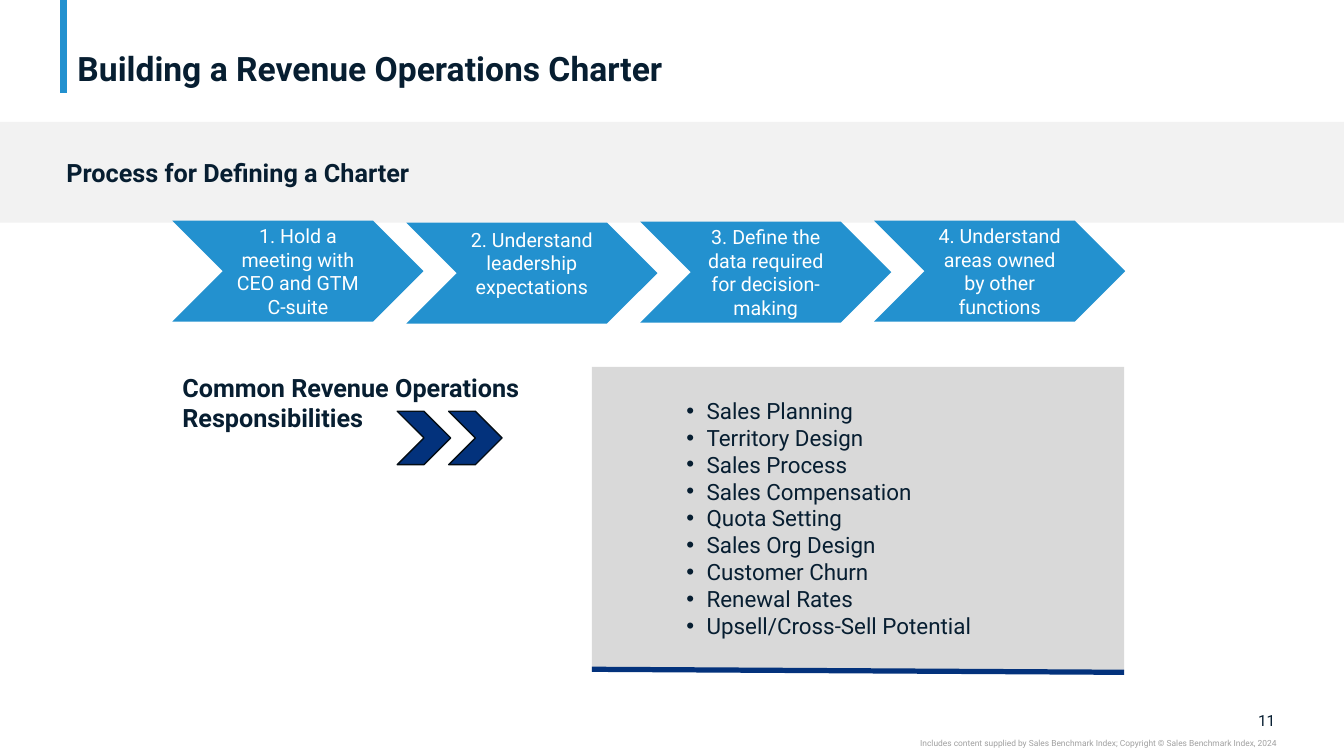
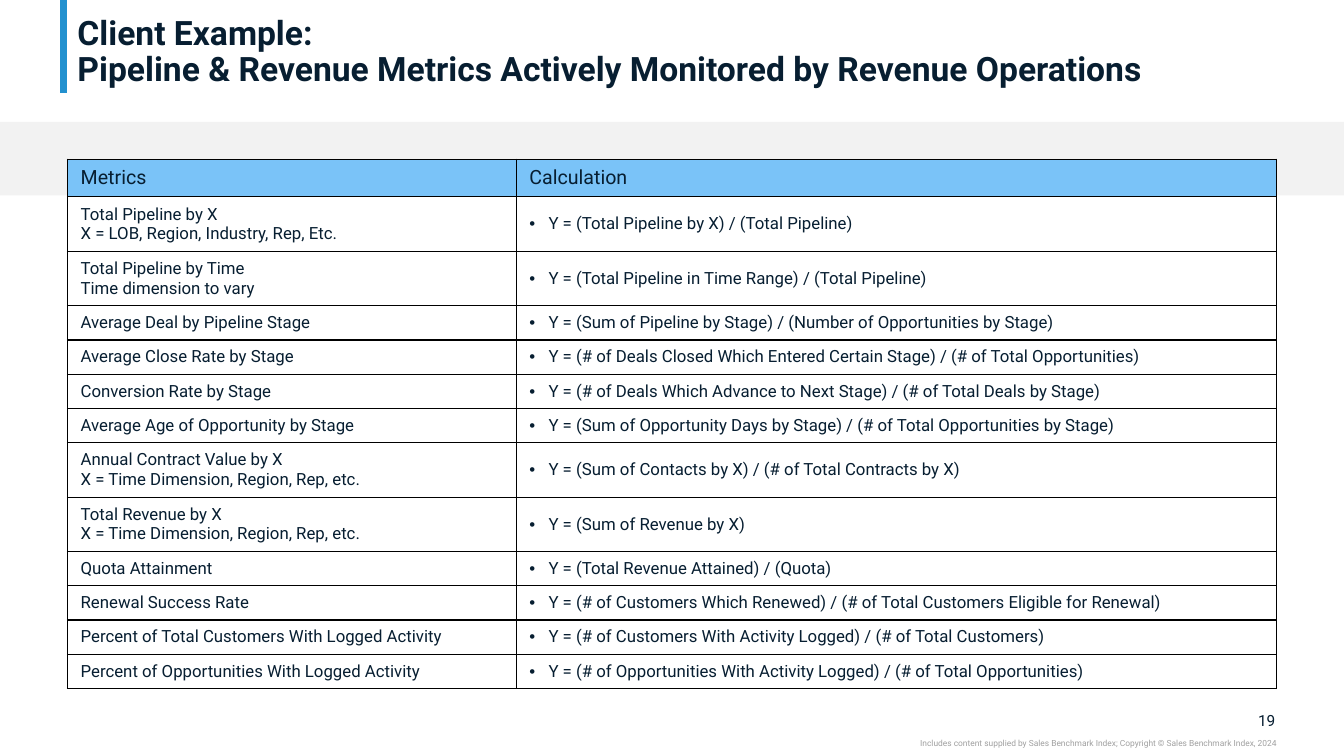
from dataclasses import dataclass, replace
from typing import NamedTuple

from lxml.etree import SubElement
from pptx import Presentation
from pptx.dml.color import RGBColor
from pptx.enum.shapes import MSO_CONNECTOR, MSO_SHAPE
from pptx.enum.text import MSO_ANCHOR, PP_ALIGN
from pptx.oxml.ns import qn
from pptx.shapes.autoshape import Shape
from pptx.slide import Slide
from pptx.table import _Cell
from pptx.text.text import TextFrame
from pptx.util import Emu, Pt

EMU_PER_PX = 9144  # 100 px to the inch
SLIDE_WIDTH, SLIDE_HEIGHT = 1333, 750

NAVY_TEXT = RGBColor(0x07, 0x1E, 0x31)
BLUE = RGBColor(0x23, 0x91, 0xCF)
DARK_BLUE = RGBColor(0x03, 0x32, 0x7C)
SKY = RGBColor(0x7A, 0xC3, 0xF8)
INK = RGBColor(0x03, 0x0D, 0x15)
BAND_GREY = RGBColor(0xF2, 0xF2, 0xF2)
PANEL_GREY = RGBColor(0xD9, 0xD9, 0xD9)
FOOTER_GREY = RGBColor(0xA0, 0xA0, 0xA0)
WHITE = RGBColor(0xFF, 0xFF, 0xFF)
BLACK = RGBColor(0x00, 0x00, 0x00)

COPYRIGHT = (
    "Includes content supplied by Sales Benchmark Index; "
    "Copyright © Sales Benchmark Index, 2024"
)


class Box(NamedTuple):
    left: int
    top: int
    width: int
    height: int


class Margins(NamedTuple):
    left: int
    top: int
    right: int
    bottom: int


@dataclass(frozen=True)
class TextStyle:
    size: int
    color: RGBColor = NAVY_TEXT
    bold: bool = False
    align: PP_ALIGN = PP_ALIGN.LEFT
    anchor: MSO_ANCHOR = MSO_ANCHOR.TOP
    margins: Margins = Margins(10, 5, 10, 5)
    line_spacing: float = 1.0
    bullet_left: int = 0
    bullet_hang: int = 0


class Step(NamedTuple):
    text: str
    top: int
    anchor: MSO_ANCHOR = MSO_ANCHOR.MIDDLE


class Metric(NamedTuple):
    name: str
    calculation: str


NO_MARGINS = Margins(0, 0, 0, 0)
TITLE = TextStyle(24, bold=True, anchor=MSO_ANCHOR.BOTTOM,
                  margins=Margins(10, 0, 10, 0), line_spacing=0.9)
HEADING = TextStyle(18, bold=True)
STEP = TextStyle(14, WHITE, align=PP_ALIGN.CENTER)
RESPONSIBILITY = TextStyle(16, bullet_left=25, bullet_hang=20)
PAGE_NUMBER = TextStyle(11, align=PP_ALIGN.RIGHT, anchor=MSO_ANCHOR.MIDDLE,
                        margins=NO_MARGINS)
FOOTER = TextStyle(6, FOOTER_GREY, align=PP_ALIGN.RIGHT, margins=NO_MARGINS)
TABLE_HEADER = TextStyle(14, anchor=MSO_ANCHOR.MIDDLE,
                         margins=Margins(13, 7, 13, 7))
METRIC_NAME = replace(TABLE_HEADER, size=12)
CALCULATION = replace(METRIC_NAME, bullet_left=19, bullet_hang=19)

STEPS = [
    Step("1. Hold a meeting with CEO and GTM C-suite", 219),
    Step("2. Understand leadership expectations", 221, MSO_ANCHOR.TOP),
    Step("3. Define the data required for decision-making", 220),
    Step("4. Understand areas owned by other functions", 219),
]

RESPONSIBILITIES = """Sales Planning
Territory Design
Sales Process
Sales Compensation
Quota Setting
Sales Org Design
Customer Churn
Renewal Rates
Upsell/Cross-Sell Potential"""

METRICS = [
    Metric("Total Pipeline by X\nX = LOB, Region, Industry, Rep, Etc.",
           "Y = (Total Pipeline by X) / (Total Pipeline)"),
    Metric("Total Pipeline by Time\nTime dimension to vary",
           "Y = (Total Pipeline in Time Range) / (Total Pipeline)"),
    Metric("Average Deal by Pipeline Stage",
           "Y = (Sum of Pipeline by Stage) / (Number of Opportunities by Stage)"),
    Metric("Average Close Rate by Stage",
           "Y = (# of Deals Closed Which Entered Certain Stage) / (# of Total Opportunities)"),
    Metric("Conversion Rate by Stage",
           "Y = (# of Deals Which Advance to Next Stage) / (# of Total Deals by Stage)"),
    Metric("Average Age of Opportunity by Stage",
           "Y = (Sum of Opportunity Days by Stage) / (# of Total Opportunities by Stage)"),
    Metric("Annual Contract Value by X\nX = Time Dimension, Region, Rep, etc.",
           "Y = (Sum of Contacts by X) / (# of Total Contracts by X)"),
    Metric("Total Revenue by X\nX = Time Dimension, Region, Rep, etc.",
           "Y = (Sum of Revenue by X)"),
    Metric("Quota Attainment",
           "Y = (Total Revenue Attained) / (Quota)"),
    Metric("Renewal Success Rate",
           "Y = (# of Customers Which Renewed) / (# of Total Customers Eligible for Renewal)"),
    Metric("Percent of Total Customers With Logged Activity",
           "Y = (# of Customers With Activity Logged) / (# of Total Customers)"),
    Metric("Percent of Opportunities With Logged Activity",
           "Y = (# of Opportunities With Activity Logged) / (# of Total Opportunities)"),
]


def px(length: int) -> Emu:
    return Emu(length * EMU_PER_PX)


def set_all(target: object, formats: dict[str, object]) -> None:
    for attribute, value in formats.items():
        setattr(target, attribute, value)


def add_bullet(paragraph, style: TextStyle) -> None:
    properties = paragraph._p.get_or_add_pPr()
    properties.set("marL", str(px(style.bullet_left)))
    properties.set("indent", str(-px(style.bullet_hang)))
    bullet_color = SubElement(properties, qn("a:buClr"))
    SubElement(bullet_color, qn("a:srgbClr"), val=str(style.color))
    SubElement(properties, qn("a:buFont"), typeface="Arial")
    SubElement(properties, qn("a:buChar"), char="•")


def write(frame: TextFrame, text: str, style: TextStyle) -> None:
    """Fill the frame with one paragraph for each line of text."""
    for index, line in enumerate(text.split("\n")):
        paragraph = frame.add_paragraph() if index else frame.paragraphs[0]
        if style.bullet_hang:
            add_bullet(paragraph, style)
        set_all(paragraph, {"alignment": style.align,
                            "line_spacing": style.line_spacing})
        run = paragraph.add_run()
        run.text = line
        set_all(run.font, {"name": "Roboto", "size": Pt(style.size),
                           "bold": style.bold})
        run.font.color.rgb = style.color


def margin_formats(style: TextStyle) -> dict[str, object]:
    return {f"margin_{side}": px(length)
            for side, length in style.margins._asdict().items()}


def write_box(shape: Shape, text: str, style: TextStyle) -> None:
    frame = shape.text_frame
    set_all(frame, {"word_wrap": True, "vertical_anchor": style.anchor,
                    **margin_formats(style)})
    write(frame, text, style)


def add_text(slide: Slide, box: Box, text: str, style: TextStyle) -> None:
    write_box(slide.shapes.add_textbox(*map(px, box)), text, style)


def add_filled(slide: Slide, preset: MSO_SHAPE, box: Box, fill: RGBColor,
               outline: RGBColor | None = None) -> Shape:
    shape = slide.shapes.add_shape(preset, *map(px, box))
    shape.shadow.inherit = False
    shape.fill.solid()
    shape.fill.fore_color.rgb = fill
    if outline is None:
        shape.line.fill.background()
    else:
        shape.line.color.rgb = outline
        shape.line.width = Pt(1)
    return shape


def add_rule(slide: Slide, start: tuple[int, int], end: tuple[int, int],
             color: RGBColor, width: float) -> None:
    rule = slide.shapes.add_connector(
        MSO_CONNECTOR.STRAIGHT, *map(px, (*start, *end)))
    rule.line.color.rgb = color
    rule.line.width = Pt(width)
    SubElement(rule._element.spPr, qn("a:effectLst"))


def add_framed_slide(deck, title: str, page: int, band_height: int) -> Slide:
    """Add a slide with the accent, band, title, page number and footer."""
    slide = deck.slides.add_slide(deck.slide_layouts[6])
    add_rule(slide, (63, 0), (63, 92), BLUE, 5)
    add_text(slide, Box(1232, 705, 33, 19), str(page), PAGE_NUMBER)
    add_text(slide, Box(750, 732, 516, 10), COPYRIGHT, FOOTER)
    add_filled(slide, MSO_SHAPE.RECTANGLE,
               Box(0, 121, SLIDE_WIDTH, band_height), BAND_GREY)
    add_text(slide, Box(67, 4, 1199, 84), title, TITLE)
    return slide


def build_charter_slide(deck) -> None:
    slide = add_framed_slide(deck, "Building a Revenue Operations Charter", 11, 100)
    add_text(slide, Box(56, 151, 471, 40), "Process for Defining a Charter", HEADING)
    for index, step in enumerate(STEPS):
        chevron = add_filled(slide, MSO_SHAPE.CHEVRON,
                             Box(171 + 232 * index, step.top, 249, 100), BLUE)
        write_box(chevron, step.text, replace(STEP, anchor=step.anchor))

    add_filled(slide, MSO_SHAPE.RECTANGLE, Box(587, 364, 528, 302), PANEL_GREY)
    add_text(slide, Box(171, 364, 471, 71),
             "Common Revenue Operations Responsibilities", HEADING)
    add_text(slide, Box(666, 389, 328, 252), RESPONSIBILITIES, RESPONSIBILITY)
    for left in (394, 445):
        add_filled(slide, MSO_SHAPE.CHEVRON, Box(left, 408, 53, 53), DARK_BLUE, INK)
    add_rule(slide, (587, 664), (1115, 667), DARK_BLUE, 3.75)


def add_borders(cell: _Cell) -> None:
    properties = cell._tc.get_or_add_tcPr()
    for edge in ("lnL", "lnR", "lnT", "lnB"):
        border = SubElement(properties, qn(f"a:{edge}"), w=str(Pt(1)))
        fill = SubElement(border, qn("a:solidFill"))
        SubElement(fill, qn("a:srgbClr"), val=str(BLACK))


def fill_cell(cell: _Cell, text: str, style: TextStyle, fill: RGBColor) -> None:
    add_borders(cell)
    cell.fill.solid()
    cell.fill.fore_color.rgb = fill
    set_all(cell, {"vertical_anchor": style.anchor, **margin_formats(style)})
    write(cell.text_frame, text, style)


def build_metrics_slide(deck) -> None:
    slide = add_framed_slide(
        deck,
        "Client Example:\n"
        "Pipeline & Revenue Metrics Actively Monitored by Revenue Operations",
        19, 73)
    rows = [Metric("Metrics", "Calculation"), *METRICS]
    heights = [36] + [52 if "\n" in metric.name else 33 for metric in METRICS]
    table = slide.shapes.add_table(
        len(rows), 2, *map(px, Box(67, 158, 1199, sum(heights)))).table
    set_all(table, {"first_row": False, "horz_banding": False})
    for column, width in zip(table.columns, (445, 754)):
        column.width = px(width)
    for index, (metric, height) in enumerate(zip(rows, heights)):
        table.rows[index].height = px(height)
        styles = (METRIC_NAME, CALCULATION) if index else (TABLE_HEADER,) * 2
        for column, (text, style) in enumerate(zip(metric, styles)):
            fill_cell(table.cell(index, column), text, style,
                      WHITE if index else SKY)


def main() -> None:
    deck = Presentation()
    set_all(deck, {"slide_width": px(SLIDE_WIDTH), "slide_height": px(SLIDE_HEIGHT)})
    build_charter_slide(deck)
    build_metrics_slide(deck)
    deck.save("out.pptx")


if __name__ == "__main__":
    main()
